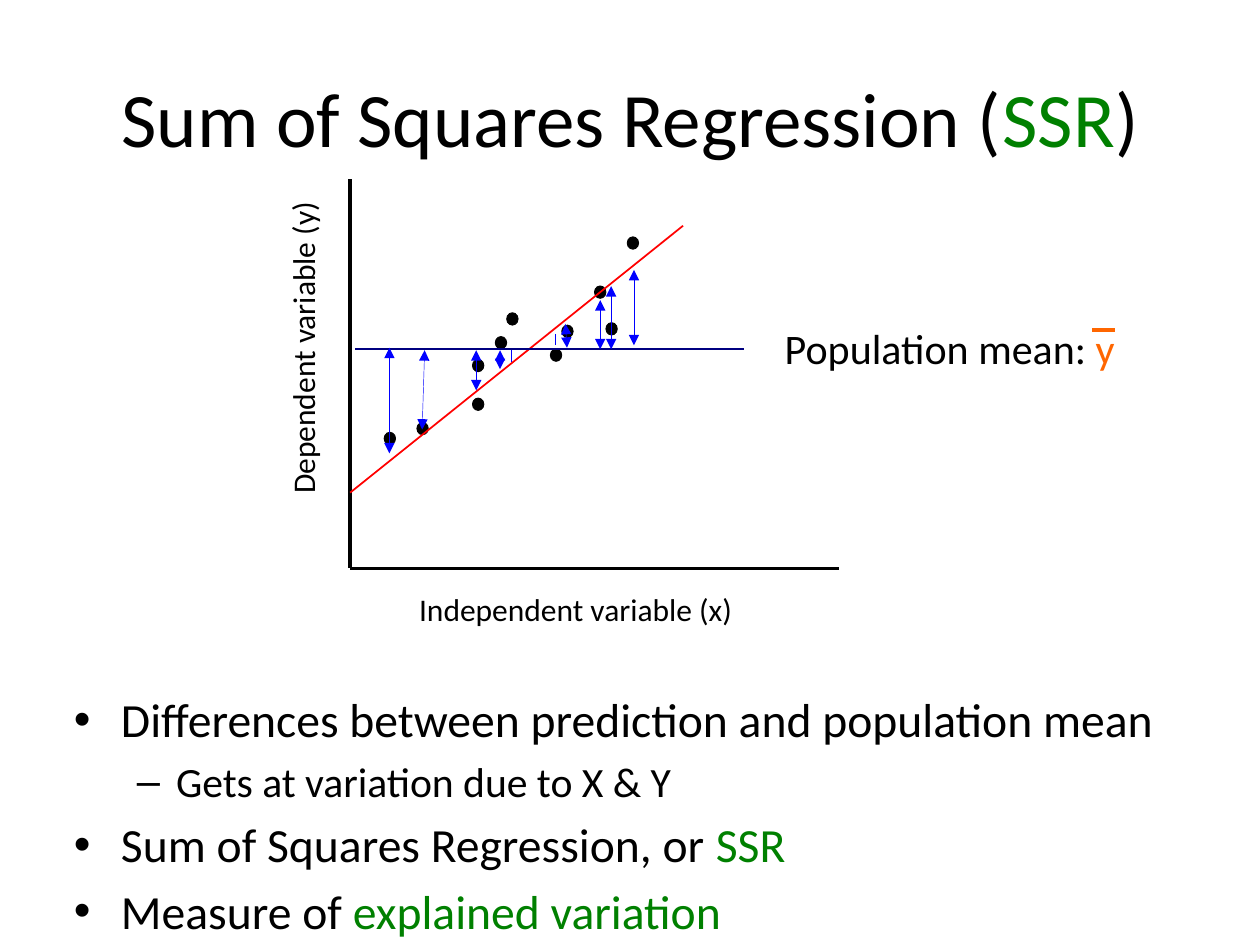
from dataclasses import dataclass

from lxml import etree
from pptx import Presentation
from pptx import util as u
from pptx.dml.color import RGBColor
from pptx.enum import shapes, text
from pptx.oxml.ns import qn


@dataclass(frozen=True)
class Theme:
    font: str = "Calibri"
    ink: str = "000000"
    green: str = "008000"
    orange: str = "FF6600"
    red: str = "FF0000"
    navy: str = "000080"
    blue: str = "0000FF"
    title: float = 44
    bullet: float = 27.2
    sub_bullet: float = 23.8
    note: float = 24
    label: float = 18


class SlideBuilder:
    def __init__(self, page, theme):
        self.page = page
        self.theme = theme

    def add_spans(self, para, pieces, size):
        """Fill a paragraph with (wording, colour) pieces."""
        for wording, colour in pieces:
            span = para.add_run()
            span.text = wording
            span.font.name = self.theme.font
            span.font.size = u.Pt(size)
            span.font.color.rgb = RGBColor.from_string(colour)

    def text_box(self, area, pieces=(), size=18, wrap=True, rotation=0):
        box = self.page.shapes.add_textbox(*map(u.Cm, area))
        box.rotation = rotation
        box.text_frame.word_wrap = wrap
        self.add_spans(box.text_frame.paragraphs[0], pieces, size)
        return box

    def title(self, area, pieces):
        box = self.text_box(area, pieces, self.theme.title)
        box.text_frame.vertical_anchor = text.MSO_ANCHOR.MIDDLE
        box.text_frame.paragraphs[0].alignment = text.PP_ALIGN.CENTER

    def bullets(self, area, items):
        """Add (level, pieces) items as a two-level list."""
        frame = self.text_box(area).text_frame
        styles = [
            ("•", 0.95, 0.95, self.theme.bullet),
            ("–", 2.06, 0.79, self.theme.sub_bullet),
        ]
        for index, (level, pieces) in enumerate(items):
            para = frame.add_paragraph() if index else frame.paragraphs[0]
            mark, margin, hanging, size = styles[level]
            para.level = level
            para.space_before = u.Pt(0.2 * size)
            self.add_spans(para, pieces, size)
            properties = para._p.get_or_add_pPr()
            properties.set("marL", str(u.Cm(margin)))
            properties.set("indent", str(-u.Cm(hanging)))
            etree.SubElement(properties, qn("a:buFont"), typeface="Arial")
            etree.SubElement(properties, qn("a:buChar"), char=mark)

    def line(self, start, end, colour, width, arrows=False):
        connector = self.page.shapes.add_connector(
            shapes.MSO_CONNECTOR.STRAIGHT, *map(u.Cm, (*start, *end)))
        connector.line.color.rgb = RGBColor.from_string(colour)
        connector.line.width = u.Pt(width)
        if arrows:
            outline = connector.line._get_or_add_ln()
            for tag in ("a:headEnd", "a:tailEnd"):
                etree.SubElement(outline, qn(tag), type="triangle")
        etree.SubElement(connector._element.spPr, qn("a:effectLst"))

    def dot(self, x, y, width=0.23, height=0.25):
        """Draw a data point centred on x, y."""
        area = (x - width / 2, y - height / 2, width, height)
        point = self.page.shapes.add_shape(
            shapes.MSO_SHAPE.OVAL, *map(u.Cm, area))
        point.shadow.inherit = False
        ink = RGBColor.from_string(self.theme.ink)
        point.fill.solid()
        point.fill.fore_color.rgb = ink
        point.line.color.rgb = ink
        point.line.width = u.Pt(0.5)


POINTS = [
    (9.64, 8.15), (8.52, 8.64), (10.1, 6.91), (11.21, 7.16),
    (10.33, 6.43), (11.44, 6.68), (12.33, 6.63), (12.1, 5.89),
    (9.64, 7.37), (7.86, 8.84), (12.76, 4.9),
]
DIFFERENCES = [
    ((12.78, 5.44), (12.78, 6.96)),
    ((12.1, 6.05), (12.1, 7.04)),
    ((10.08, 7.06), (10.08, 7.44)),
    ((7.85, 7.01), (7.85, 9.14)),
    ((8.56, 7.06), (8.51, 8.66)),
    ((9.6, 7.06), (9.6, 7.87)),
    ((12.32, 5.77), (12.32, 7.04)),
    ((11.4, 6.53), (11.43, 7.01)),
]
SMALL_DIFFERENCES = [
    ((11.2, 6.73), (11.2, 6.96)),
    ((10.31, 7.06), (10.31, 7.29)),
]


def main():
    deck = Presentation()
    deck.slide_width, deck.slide_height = u.Cm(25.4), u.Cm(19.05)
    theme = Theme()
    slide = SlideBuilder(deck.slides.add_slide(deck.slide_layouts[6]), theme)
    ink, green = theme.ink, theme.green

    slide.title((1.27, 0.76, 22.86, 3.18), [
        ("Sum of Squares Regression (", ink), ("SSR", green), (")", ink)])
    slide.bullets((1.24, 13.79, 22.86, 4.83), [
        (0, [("Differences between prediction and population mean", ink)]),
        (1, [("Gets at variation due to X & Y", ink)]),
        (0, [("Sum of Squares Regression, or ", ink), ("SSR", green)]),
        (0, [("Measure of ", ink), ("explained variation", green)]),
    ])

    slide.text_box((15.57, 6.38, 7.24, 1.27), [
        ("Population mean: ", ink), ("y", theme.orange)],
        theme.note, wrap=False)
    slide.line((22.02, 6.65), (22.48, 6.65), theme.orange, 2)

    origin = (7.06, 11.46)
    slide.line((7.06, 3.61), origin, ink, 2)
    slide.line(origin, (16.92, 11.46), ink, 2)
    slide.text_box((8.2, 11.76, 7.77, 1.17),
                   [("Independent variable (x)", ink)],
                   theme.label, wrap=False)
    slide.text_box((2.18, 5.77, 7.85, 1.02),
                   [("Dependent variable (y)", ink)],
                   theme.label, rotation=270)

    for point in POINTS:
        slide.dot(*point)
    slide.line((7.06, 9.93), (13.77, 4.55), theme.red, 1)
    slide.line((7.16, 7.04), (14.99, 7.04), theme.navy, 1.25)
    for start, end in DIFFERENCES:
        slide.line(start, end, theme.blue, 0.25, arrows=True)
    for start, end in SMALL_DIFFERENCES:
        slide.line(start, end, theme.blue, 0.25)

    deck.save("out.pptx")


if __name__ == "__main__":
    main()
